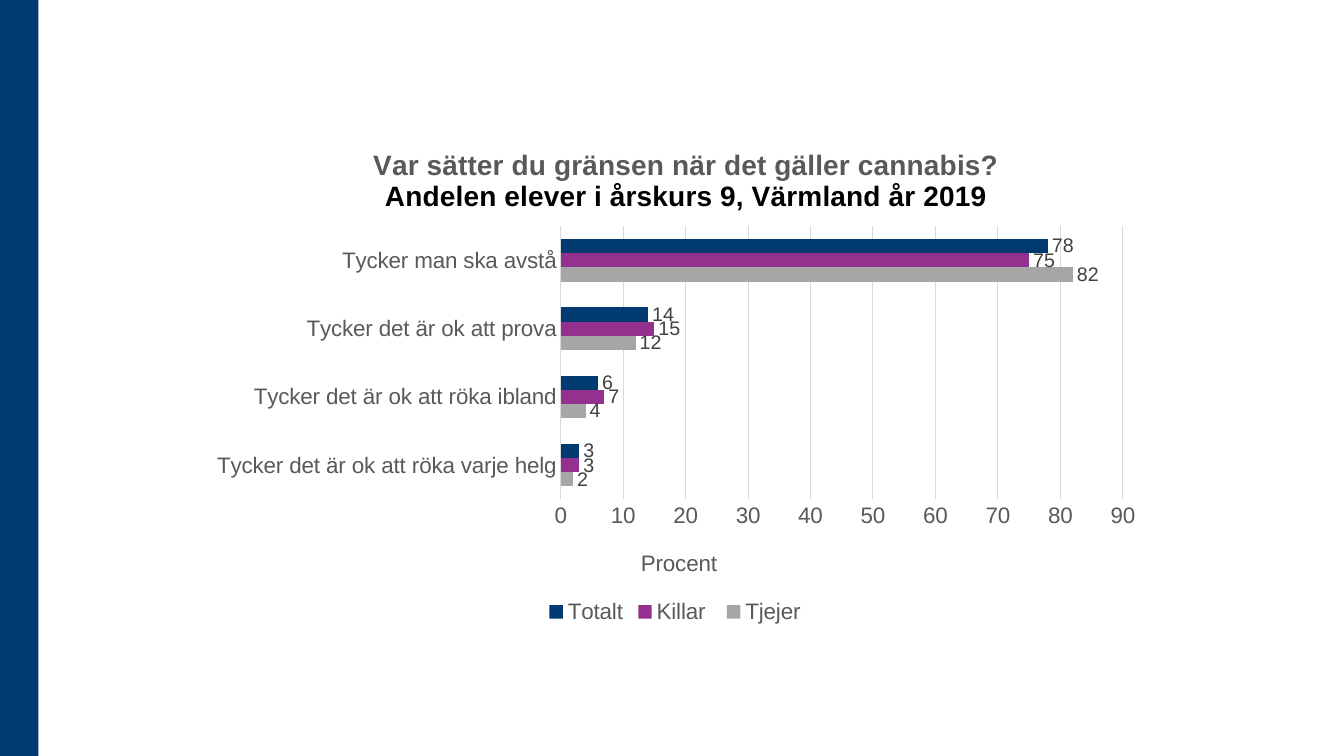
from lxml.etree import SubElement
from pptx import Presentation
from pptx.chart.data import CategoryChartData
from pptx.dml.color import RGBColor
from pptx.enum.chart import (XL_CHART_TYPE, XL_LABEL_POSITION,
                             XL_LEGEND_POSITION, XL_TICK_MARK)
from pptx.enum.shapes import MSO_SHAPE
from pptx.oxml.ns import qn
from pptx.util import Inches, Pt

NAVY, GREY, PALE = "003A70", "595959", "D9D9D9"


def color(code):
    return RGBColor.from_string(code)


def place(node, index, **spots):
    """Give a chart part a manual layout, in fractions of the chart."""
    for old in node.findall(qn("c:layout")):
        node.remove(old)
    layout = SubElement(node, qn("c:layout"))
    node.insert(index, layout)
    manual = SubElement(layout, qn("c:manualLayout"))
    if node.tag == qn("c:plotArea"):
        SubElement(manual, qn("c:layoutTarget")).set("val", "inner")
    for axis in "xy":
        SubElement(manual, qn(f"c:{axis}Mode")).set("val", "edge")
    for key, value in spots.items():
        SubElement(manual, qn(f"c:{key}")).set("val", str(value))


deck = Presentation()
deck.slide_width, deck.slide_height = Inches(13.33), Inches(7.5)
slide = deck.slides.add_slide(deck.slide_layouts[6])

band = slide.shapes.add_shape(MSO_SHAPE.RECTANGLE, 0, 0, Inches(0.38), Inches(7.5))
band.shadow.inherit = False
band.fill.solid()
band.fill.fore_color.rgb = color(NAVY)
band.line.fill.background()

data = CategoryChartData(number_format="0")
data.categories = ["Tycker det är ok att röka varje helg",
                   "Tycker det är ok att röka ibland",
                   "Tycker det är ok att prova",
                   "Tycker man ska avstå"]
groups = [("Tjejer", [2, 4, 12, 82], "A6A6A6"),
          ("Killar ", [3, 7, 15, 75], "93328E"),
          ("Totalt", [3, 6, 14, 78], NAVY)]
for name, values, fill in groups:
    data.add_series(name, values)
chart = slide.shapes.add_chart(XL_CHART_TYPE.BAR_CLUSTERED, Inches(1.97), Inches(1.24),
                               Inches(9.45), Inches(5.02), data).chart

# Bars and their labels
plot = chart.plots[0]
plot.gap_width = 182
plot.overlap = 0
plot.vary_by_categories = False
fonts = [(chart.font, 16, "000000", False)]
for series, (name, values, fill) in zip(plot.series, groups):
    series.format.fill.solid()
    series.format.fill.fore_color.rgb = color(fill)
    series.invert_if_negative = False
    labels = series.data_labels
    formats = {"show_value": True, "position": XL_LABEL_POSITION.OUTSIDE_END,
               "number_format": "0", "number_format_is_linked": False}
    for key, value in formats.items():
        setattr(labels, key, value)
    fonts.append((labels.font, 14, "404040", False))

# Axes
steps, names = chart.value_axis, chart.category_axis
for axis in (steps, names):
    axis.major_tick_mark = axis.minor_tick_mark = XL_TICK_MARK.NONE
    fonts.append((axis.tick_labels.font, 16, GREY, False))
scale = {"minimum_scale": 0, "maximum_scale": 90, "major_unit": 10,
         "has_major_gridlines": True, "has_title": True}
for key, value in scale.items():
    setattr(steps, key, value)
steps.tick_labels.number_format = "0"
steps.tick_labels.number_format_is_linked = False
steps.format.line.fill.background()
names.has_major_gridlines = False
for line in (names.format.line, steps.major_gridlines.format.line):
    line.color.rgb = color(PALE)
    line.width = Pt(0.75)

# Titles and legend
unit = steps.axis_title.text_frame.paragraphs[0].add_run()
unit.text = "Procent"
fonts.append((unit.font, 16, GREY, False))

chart.has_title = True
frame = chart.chart_title.text_frame
for index, (text, ink) in enumerate([
        ("Var sätter du gränsen när det gäller cannabis?", GREY),
        ("Andelen elever i årskurs 9, Värmland år 2019", "000000")]):
    para = frame.add_paragraph() if index else frame.paragraphs[0]
    run = para.add_run()
    run.text = text
    fonts.append((run.font, 20, ink, True))

chart.has_legend = True
legend = chart.legend
legend.position = XL_LEGEND_POSITION.BOTTOM
legend.include_in_layout = False
fonts.append((legend.font, 16, GREY, False))

for font, size, ink, bold in fonts:
    for key, value in {"name": "Arial", "size": Pt(size), "bold": bold}.items():
        setattr(font, key, value)
    font.color.rgb = color(ink)

area = names._element.getparent()
place(area, 0, x=0.38, y=0.2, w=0.59, h=0.54)
place(chart.chart_title._element, 1, x=0.18, y=0.04)
place(steps.axis_title._element, 1, x=0.46, y=0.83)
place(legend._element, 1, x=0.36, y=0.94, w=0.28, h=0.06)

deck.save("out.pptx")
